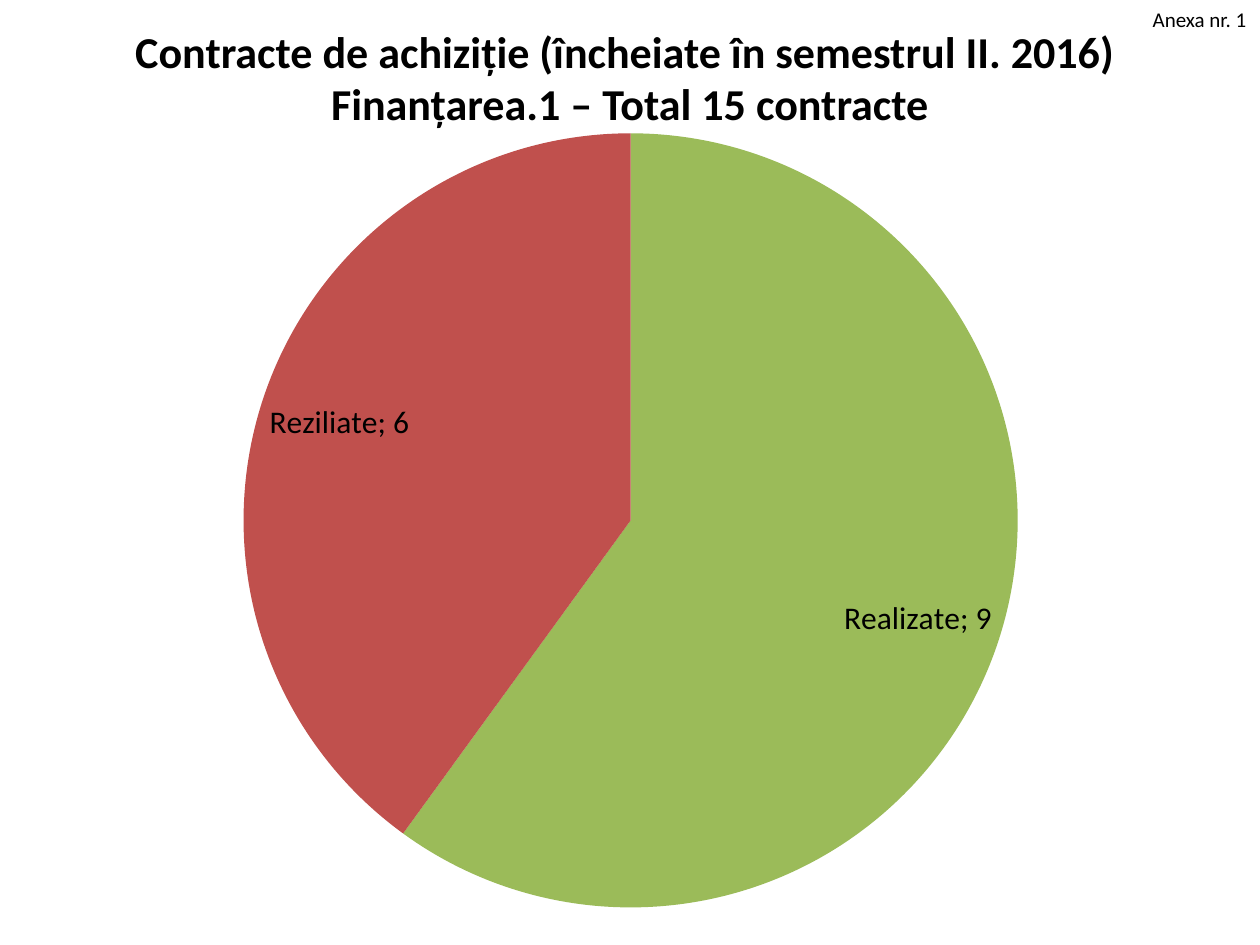
from dataclasses import dataclass

from lxml import etree
from pptx import Presentation
from pptx import util as u
from pptx.chart import data as chart_data
from pptx.dml import color
from pptx.enum import chart as ch, text
from pptx.oxml import ns


@dataclass(frozen=True)
class Theme:
    font: str = "Calibri"
    ink: str = "000000"
    completed: str = "9BBB59"
    terminated: str = "C0504D"
    title_size: float = 25.2
    label_size: float = 18
    note_size: float = 12


THEME = Theme()


def inches(box):
    return [u.Inches(length) for length in box]


def style(font, size, bold=False):
    font.name = THEME.font
    font.size = u.Pt(size)
    font.bold = bold
    font.color.rgb = color.RGBColor.from_string(THEME.ink)


def place_title(slide, box, lines):
    title = slide.shapes.title
    title.left, title.top, title.width, title.height = inches(box)
    frame = title.text_frame
    frame.text = "\v".join(lines)
    frame.auto_size = text.MSO_AUTO_SIZE.NONE
    frame.vertical_anchor = text.MSO_ANCHOR.MIDDLE
    heading = frame.paragraphs[0]
    heading.alignment = text.PP_ALIGN.CENTER
    style(heading.font, THEME.title_size, bold=True)


def place_contract_pie(slide, box, contracts):
    """contracts: (status, count, colour) for each slice."""
    counts = chart_data.CategoryChartData()
    counts.categories = [status for status, _, _ in contracts]
    counts.add_series("Series 1", [count for _, count, _ in contracts])
    pie = slide.shapes.add_chart(ch.XL_CHART_TYPE.PIE, *inches(box), counts).chart
    pie.has_legend = False
    pie.has_title = False
    style(pie.font, THEME.label_size)

    # Slice colours
    plot = pie.plots[0]
    plot.vary_by_categories = True
    for index, (_, _, fill_colour) in enumerate(contracts):
        fill = plot.series[0].points[index].format.fill
        fill.solid()
        fill.fore_color.rgb = color.RGBColor.from_string(fill_colour)

    # Status and count inside each slice
    plot.has_data_labels = True
    labels = plot.data_labels
    labels.show_category_name = True
    labels.show_value = True
    labels.show_percentage = False
    labels.position = ch.XL_LABEL_POSITION.INSIDE_END
    style(labels.font, THEME.label_size)
    separator = etree.Element(ns.qn("c:separator"))
    separator.text = "; "
    flags = plot._element.find(ns.qn("c:dLbls"))
    last_flag = flags.find(ns.qn("c:showBubbleSize"))
    if last_flag is None:
        last_flag = flags.find(ns.qn("c:showPercent"))
    last_flag.addnext(separator)


def place_annex_note(slide, box, wording):
    frame = slide.shapes.add_textbox(*inches(box)).text_frame
    frame.word_wrap = False
    frame.auto_size = text.MSO_AUTO_SIZE.SHAPE_TO_FIT_TEXT
    frame.text = wording
    style(frame.paragraphs[0].font, THEME.note_size)


def main():
    deck = Presentation()
    deck.slide_width, deck.slide_height = inches((10, 7.5))
    slide = deck.slides.add_slide(deck.slide_layouts[5])

    place_title(slide, (0.5, 0.3, 9, 0.62), [
        "Contracte de achiziție (încheiate în semestrul II. 2016) ",
        "Finanțarea.1 – Total 15 contracte",
    ])
    place_contract_pie(slide, (0.17, 0.92, 9.67, 6.42), [
        ("Realizate", 9, THEME.completed),
        ("Reziliate", 6, THEME.terminated),
    ])
    place_annex_note(slide, (9.05, 0, 0.95, 0.3), "Anexa nr. 1")
    deck.save("out.pptx")


if __name__ == "__main__":
    main()
